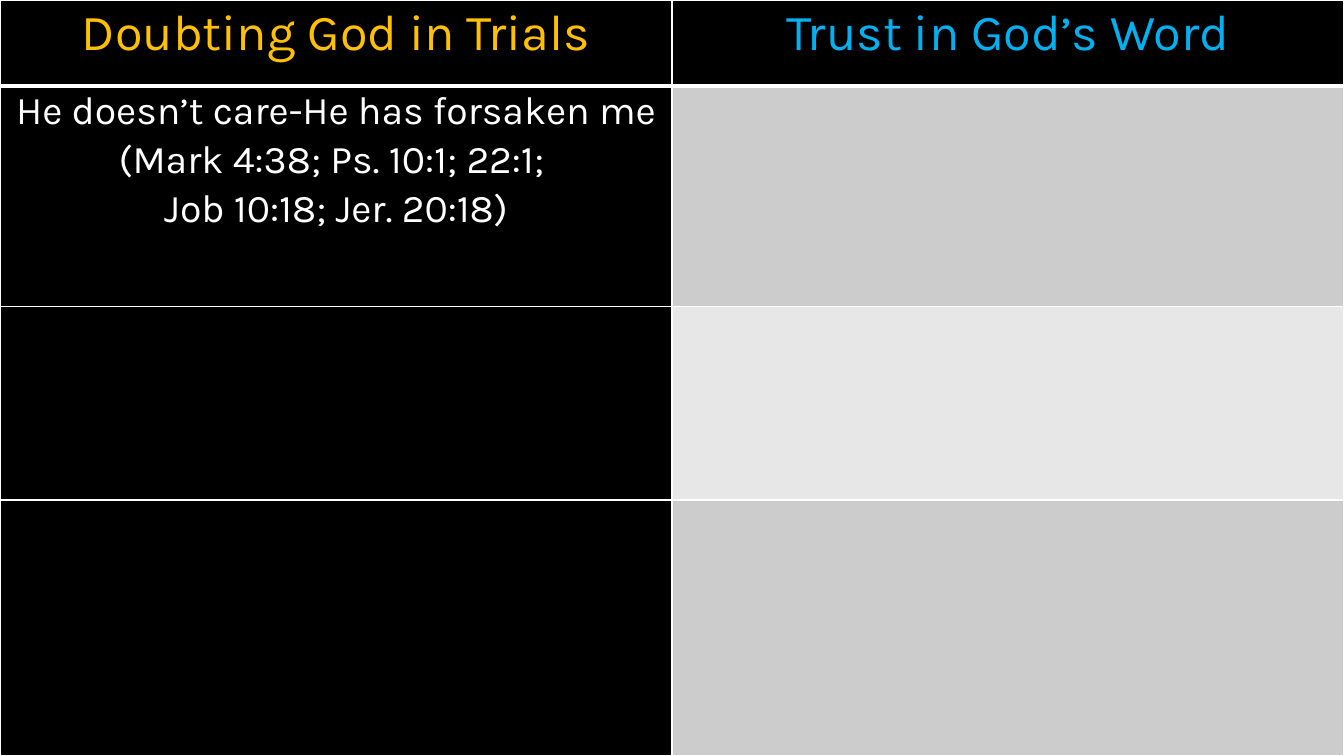
from lxml.etree import SubElement
from pptx import Presentation
from pptx.dml.color import RGBColor
from pptx.enum.text import PP_ALIGN
from pptx.oxml.ns import qn
from pptx.util import Cm, Pt

COLORS = {
    "black": "000000",
    "white": "FFFFFF",
    "gold": "FFC000",
    "blue": "00B0F0",
    "gray": "CCCCCC",
    "light gray": "E7E7E7",
}
FONT = "Karla"
SLIDE_WIDTH, SLIDE_HEIGHT = Cm(33.87), Cm(19.05)
ROW_HEIGHTS = [2.16, 5.56, 4.88, 6.45]
TRUST_FILLS = ["black", "gray", "light gray", "gray"]
HEADER_LINE, GRID_LINE = 3, 1

# (row, column): text, size in points, color
CELL_TEXTS = {
    (0, 0): ("Doubting God in Trials", 36, "gold"),
    (0, 1): ("Trust in God’s Word", 36, "blue"),
    (1, 0): (
        "He doesn’t care-He has forsaken me (Mark 4:38; Ps. 10:1; 22:1; \n"
        "Job 10:18; Jer. 20:18)", 28, "white"),
}


def add_border(cell, side, points):
    """Draw a white line on one side ("L", "R", "T" or "B") of a cell."""
    line = SubElement(cell._tc.get_or_add_tcPr(), qn(f"a:ln{side}"), w=str(Pt(points)))
    fill = SubElement(line, qn("a:solidFill"))
    SubElement(fill, qn("a:srgbClr"), val=COLORS["white"])


presentation = Presentation()
presentation.slide_width, presentation.slide_height = SLIDE_WIDTH, SLIDE_HEIGHT
slide = presentation.slides.add_slide(presentation.slide_layouts[6])
slide.background.fill.solid()
slide.background.fill.fore_color.rgb = RGBColor.from_string(COLORS["black"])

table = slide.shapes.add_table(
    len(ROW_HEIGHTS), 2, 0, 0, SLIDE_WIDTH, SLIDE_HEIGHT).table
for row, height in zip(table.rows, ROW_HEIGHTS):
    row.height = Cm(height)

for row_index, trust_fill in enumerate(TRUST_FILLS):
    for column_index, fill_name in enumerate(["black", trust_fill]):
        cell = table.cell(row_index, column_index)
        cell.margin_left = cell.margin_right = Cm(0.18)
        cell.margin_top = cell.margin_bottom = 0

        # Borders must come before the fill in the cell properties
        for side in "LRTB":
            under_header = (row_index, side) in [(0, "B"), (1, "T")]
            add_border(cell, side, HEADER_LINE if under_header else GRID_LINE)
        cell.fill.solid()
        cell.fill.fore_color.rgb = RGBColor.from_string(COLORS[fill_name])

        if (row_index, column_index) not in CELL_TEXTS:
            continue
        text, size, color = CELL_TEXTS[row_index, column_index]
        cell.text_frame.text = text
        for paragraph in cell.text_frame.paragraphs:
            paragraph.alignment = PP_ALIGN.CENTER
            paragraph.line_spacing = 1.07
            for run in paragraph.runs:
                run.font.name = FONT
                run.font.size = Pt(size)
                run.font.bold = False
                run.font.color.rgb = RGBColor.from_string(COLORS[color])

presentation.save("out.pptx")
